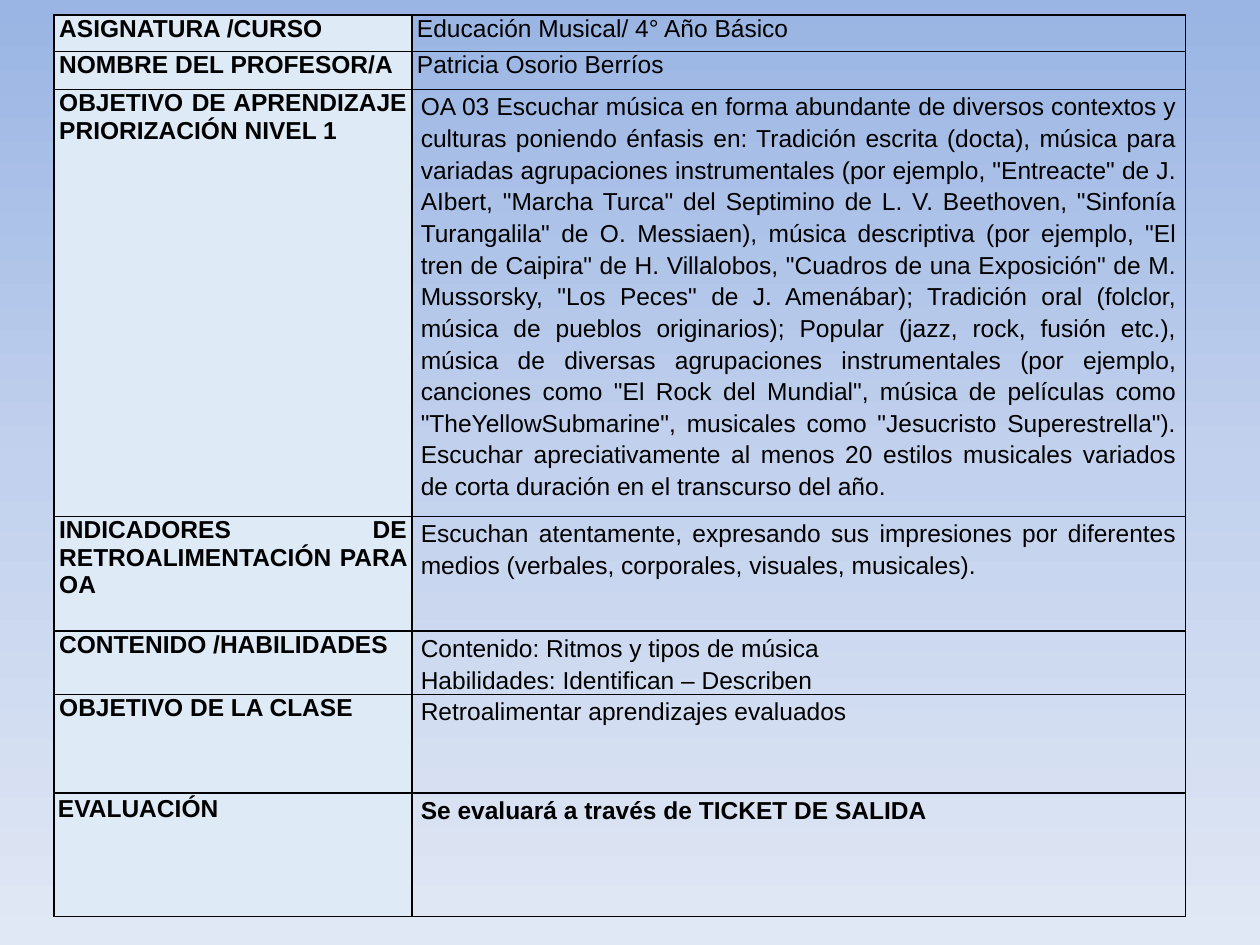
from copy import deepcopy

from lxml.etree import SubElement
from pptx import Presentation
from pptx.dml.color import RGBColor
from pptx.enum.text import PP_ALIGN
from pptx.oxml.ns import qn
from pptx.util import Inches, Pt

THEME = {
    "font": "Arial",
    "size": Pt(14),
    "text": RGBColor.from_string("000000"),
    "label_fill": RGBColor.from_string("DEEAF6"),
    "border": "000000",
    "border_width": Pt(1),
    "background": ["9AB5E4", "C2D1ED", "E1E8F5"],
}

LEARNING_GOAL = " ".join([
    "OA 03 Escuchar música en forma abundante de diversos contextos y culturas",
    "poniendo énfasis en: Tradición escrita (docta), música para variadas",
    "agrupaciones instrumentales (por ejemplo, \"Entreacte\" de J. AIbert,",
    "\"Marcha Turca\" del Septimino de L. V. Beethoven, \"Sinfonía Turangalila\"",
    "de O. Messiaen), música descriptiva (por ejemplo, \"El tren de Caipira\" de",
    "H. Villalobos, \"Cuadros de una Exposición\" de M. Mussorsky, \"Los Peces\"",
    "de J. Amenábar); Tradición oral (folclor, música de pueblos originarios);",
    "Popular (jazz, rock, fusión etc.), música de diversas agrupaciones",
    "instrumentales (por ejemplo, canciones como \"El Rock del Mundial\", música",
    "de películas como \"TheYellowSubmarine\", musicales como \"Jesucristo",
    "Superestrella\"). Escuchar apreciativamente al menos 20 estilos musicales",
    "variados de corta duración en el transcurso del año.",
])

# Each row: height, label paragraphs, content paragraphs
ROWS = [
    (0.29, ["ASIGNATURA /CURSO"], ["Educación Musical/ 4° Año Básico"]),
    (0.3, ["NOMBRE DEL PROFESOR/A"], ["Patricia Osorio Berríos"]),
    (3.39, ["OBJETIVO DE APRENDIZAJE PRIORIZACIÓN NIVEL 1"], [LEARNING_GOAL]),
    (0.91, ["INDICADORES DE RETROALIMENTACIÓN PARA OA"], [
        "Escuchan atentamente, expresando sus impresiones por diferentes medios "
        "(verbales, corporales, visuales, musicales)."]),
    (0.5, ["CONTENIDO /HABILIDADES"], [
        "Contenido: Ritmos y tipos de música",
        "Habilidades: Identifican – Describen"]),
    (0.78, ["OBJETIVO DE LA CLASE"], ["Retroalimentar aprendizajes evaluados"]),
    (0.98, ["EVALUACIÓN"], ["Se evaluará a través de TICKET DE SALIDA"]),
]
COLUMN_WIDTHS = [2.84, 6.14]
HEADER_ROWS = 2
LAST_ROW = len(ROWS) - 1


def add_borders(cell):
    properties = cell._tc.get_or_add_tcPr()
    for index, side in enumerate(("a:lnL", "a:lnR", "a:lnT", "a:lnB")):
        line = properties.makeelement(qn(side), {"w": str(THEME["border_width"])})
        solid = SubElement(line, qn("a:solidFill"))
        SubElement(solid, qn("a:srgbClr"), val=THEME["border"])
        properties.insert(index, line)


def write_cell(cell, texts, bold, spacing, inset_x, inset_y):
    cell.margin_left = cell.margin_right = Inches(inset_x)
    cell.margin_top = cell.margin_bottom = Inches(inset_y)
    frame = cell.text_frame
    for index, text in enumerate(texts):
        para = frame.add_paragraph() if index else frame.paragraphs[0]
        para.alignment = PP_ALIGN.JUSTIFY
        para.line_spacing = spacing
        span = para.add_run()
        span.text = text
        span.font.name = THEME["font"]
        span.font.size = THEME["size"]
        span.font.bold = bold
        span.font.color.rgb = THEME["text"]


deck = Presentation()
deck.slide_width = Inches(10)
deck.slide_height = Inches(7.5)
page = deck.slides.add_slide(deck.slide_layouts[6])

# Background: vertical gradient with three evenly spaced stops
fill = page.background.fill
fill.gradient()
fill.gradient_angle = 270
stop_list = page._element.find(".//" + qn("a:gsLst"))
stop_list.append(deepcopy(stop_list[0]))
for index, (stop, color) in enumerate(zip(fill.gradient_stops, THEME["background"])):
    stop.position = index / 2
    stop.color.rgb = RGBColor.from_string(color)

# Lesson plan table
table = page.shapes.add_table(
    len(ROWS), len(COLUMN_WIDTHS), Inches(0.43), Inches(0.12),
    Inches(sum(COLUMN_WIDTHS)), Inches(sum(row[0] for row in ROWS))).table
table.first_row = False
table.horz_banding = False
for column, width in zip(table.columns, COLUMN_WIDTHS):
    column.width = Inches(width)

for number, (height, label, content) in enumerate(ROWS):
    table.rows[number].height = Inches(height)
    label_cell, content_cell = table.cell(number, 0), table.cell(number, 1)
    is_header, is_last = number < HEADER_ROWS, number == LAST_ROW

    # Label on the left
    label_cell.fill.solid()
    label_cell.fill.fore_color.rgb = THEME["label_fill"]
    write_cell(label_cell, label, True, 1.0,
               0.03 if is_last else 0.04, 0.02 if is_last else 0)

    # Content on the right
    content_cell.fill.background()
    write_cell(content_cell, content, is_last, 1.0 if is_header else 1.15,
               0.04 if is_header else 0.07, 0)

    for cell in (label_cell, content_cell):
        add_borders(cell)

deck.save("out.pptx")
